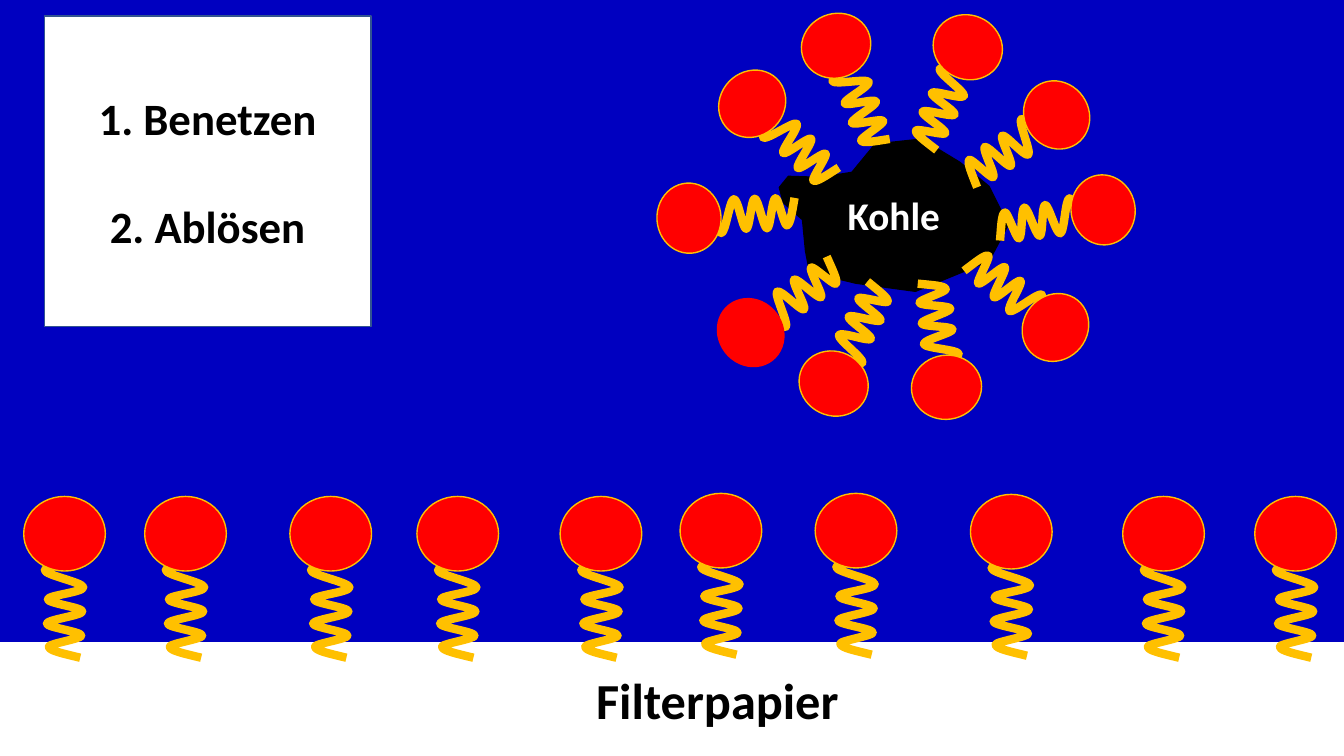
import math

import pptx
import pptx.util
import pptx.dml.color
import pptx.enum.shapes
import pptx.enum.text
import pptx.oxml.ns
from lxml import etree

Inches = pptx.util.Inches
Pt = pptx.util.Pt
qn = pptx.oxml.ns.qn
Kind = pptx.enum.shapes.MSO_SHAPE

RED, GOLD, BLACK, WHITE = "FF0000", "FFC000", "000000", "FFFFFF"

# Spring tail, foot at the top: a start point, then three points per curve
TAIL_W, TAIL_H = 0.39, 1.21
TAIL = [
    (0.36, 1.21),
    (0.17, 1.13), (0, 1.04), (0, 0.99),
    (0, 0.93), (0.39, 0.92), (0.39, 0.87),
    (0.39, 0.82), (0.02, 0.75), (0.01, 0.70),
    (0.01, 0.65), (0.36, 0.62), (0.36, 0.58),
    (0.36, 0.54), (0.02, 0.50), (0.02, 0.46),
    (0.02, 0.42), (0.36, 0.38), (0.37, 0.34),
    (0.37, 0.30), (0.03, 0.26), (0.03, 0.22),
    (0.02, 0.19), (0.35, 0.14), (0.35, 0.11),
    (0.35, 0.07), (0.20, 0.04), (0.04, 0),
]
HEAD_W, HEAD_H, HEAD_GAP = 0.81, 0.74, 0.625

COAL = [
    (8.14, 1.76), (8.45, 1.71), (8.68, 1.43), (9.14, 1.38), (9.52, 1.61),
    (9.81, 1.85), (10, 2.23), (9.81, 2.59), (9.08, 2.89), (8.49, 2.81),
    (8.03, 2.7), (7.99, 2.49), (7.96, 2.18), (7.77, 2.01), (7.73, 1.86),
    (7.82, 1.75),
]

# Tail centres of the soap on the paper
ROW = [
    (8.49, 5.89), (7.15, 5.89), (5.96, 5.92), (0.64, 5.92), (4.54, 5.92),
    (3.28, 5.92), (1.84, 5.92), (10.03, 5.9), (11.54, 5.92), (12.85, 5.92),
]
# Tail centre, turn and head outline of the soap round the coal
RING = [
    (7.37, 2.13, 86.3, GOLD), (7.85, 1.4, 133.6, GOLD),
    (10.04, 1.45, 234.9, GOLD), (9.38, 0.96, 204, GOLD),
    (8.5, 0.95, 157.3, GOLD), (7.87, 2.97, 52.2, RED),
    (8.5, 3.32, 25.5, GOLD), (9.31, 3.31, 351.7, GOLD),
    (10.05, 2.91, 309, GOLD), (10.41, 2.17, 260.6, GOLD),
]
RING_SIZE = 0.86


def color(code):
    return pptx.dml.color.RGBColor.from_string(code)


def bend(shape):
    """Turn each three straight segments of a freeform into one cubic curve."""
    path = shape.element.find(".//" + qn("a:path"))
    lines = path.findall(qn("a:lnTo"))
    for first in range(0, len(lines), 3):
        curve = etree.SubElement(path, qn("a:cubicBezTo"))
        for line in lines[first:first + 3]:
            curve.append(line[0])
            path.remove(line)


class Board:
    font = "Calibri"

    def __init__(self, deck):
        self.slide = deck.slides.add_slide(deck.slide_layouts[6])
        self.shapes = self.slide.shapes

    def back(self, fill):
        self.slide.background.fill.solid()
        self.slide.background.fill.fore_color.rgb = color(fill)

    def paint(self, shape, fill, line, width=1):
        shape.shadow.inherit = False
        if fill:
            shape.fill.solid()
            shape.fill.fore_color.rgb = color(fill)
        else:
            shape.fill.background()
        shape.line.color.rgb = color(line)
        shape.line.width = Pt(width)
        return shape

    def box(self, left, top, width, height, line):
        shape = self.shapes.add_shape(
            Kind.RECTANGLE, Inches(left), Inches(top), Inches(width), Inches(height))
        return self.paint(shape, WHITE, line)

    def free(self, shapes, points, close, left=0, top=0):
        spots = [(Inches(x), Inches(y)) for x, y in points]
        pen = shapes.build_freeform(*spots[0])
        pen.add_line_segments(spots[1:], close=close)
        return pen.convert_to_shape(Inches(left), Inches(top))

    def soap(self, x, y, turn, size=1, edge=GOLD):
        """Draw a molecule: spring tail centred at x, y and a round head."""
        group = self.shapes.add_group_shape()
        points = [(px * size, py * size) for px, py in TAIL]
        tail = self.free(group.shapes, points, False,
                         x - TAIL_W * size / 2, y - TAIL_H * size / 2)
        bend(tail)
        tail.rotation = turn
        self.paint(tail, None, GOLD, 6)

        angle = math.radians(turn)
        wide, high, gap = HEAD_W * size, HEAD_H * size, HEAD_GAP * size
        head = group.shapes.add_shape(
            Kind.OVAL,
            Inches(x - gap * math.sin(angle) - wide / 2),
            Inches(y + gap * math.cos(angle) - high / 2),
            Inches(wide), Inches(high))
        head.rotation = (turn + 180) % 360
        self.paint(head, RED, edge)

    def text(self, shape, lines, size, ink, gap=0):
        frame = shape.text_frame
        frame.word_wrap = True
        frame.vertical_anchor = pptx.enum.text.MSO_ANCHOR.MIDDLE
        for index, words in enumerate(lines):
            para = frame.add_paragraph() if index else frame.paragraphs[0]
            para.alignment = pptx.enum.text.PP_ALIGN.CENTER
            if index:
                para.space_before = Pt(gap)
            run = para.add_run()
            run.text = words
            run.font.name = self.font
            run.font.size = Pt(size)
            run.font.bold = True
            run.font.color.rgb = color(ink)


def main():
    deck = pptx.Presentation()
    deck.slide_width, deck.slide_height = Inches(13.33), Inches(7.5)
    board = Board(deck)
    board.back("0000C0")

    paper = board.box(0, 6.38, 13.33, 1.12, WHITE)
    paper.text_frame.margin_left = Inches(1)
    board.text(paper, ["Filterpapier"], 36, BLACK)
    for x, y in ROW:
        board.soap(x, y, 180)

    coal = board.paint(board.free(board.shapes, COAL, True), BLACK, BLACK)
    board.text(coal, ["Kohle"], 28, WHITE)
    for x, y, turn, edge in RING:
        board.soap(x, y, turn, RING_SIZE, edge)

    steps = board.box(0.44, 0.16, 3.24, 3.08, "325491")
    board.text(steps, ["1. Benetzen", "2. Ablösen"], 32, BLACK, gap=39)
    deck.save("out.pptx")


if __name__ == "__main__":
    main()
